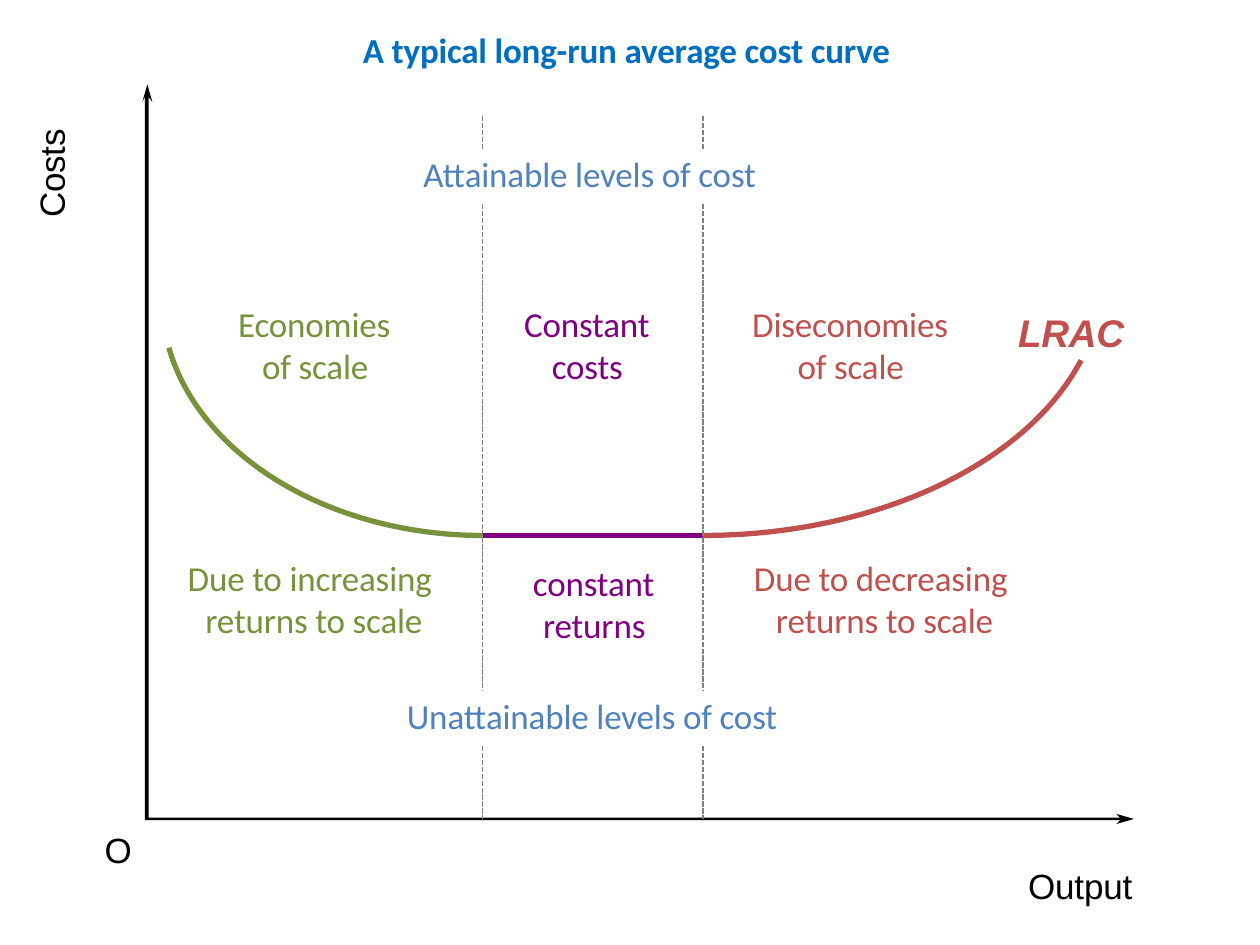
from math import acos, cos, sin

from pptx import Presentation
from pptx.dml.color import RGBColor
from pptx.enum.dml import MSO_LINE_DASH_STYLE as Dash
from pptx.enum.shapes import MSO_CONNECTOR as Connector
from pptx.enum.text import PP_ALIGN as Align
from pptx.oxml.ns import qn
from pptx.util import Inches, Pt
from lxml.etree import SubElement

THEME = {
    "title": "006FC0", "axis": "000000", "economies": "77923B",
    "constant": "800080", "diseconomies": "C0504D", "level": "4F81BC",
    "guide": "808080", "size": 20, "curve_size": 22,
    "curve_width": 3, "guide_width": 1,
}
CAPTION = {"name": "Calibri", "size": Pt(THEME["size"])}
TITLE = {**CAPTION, "bold": True}
AXIS = {**CAPTION, "name": "Arial"}
CURVE = {"name": "Arial", "size": Pt(THEME["curve_size"]), "bold": True, "italic": True}

PLAIN = (0.01, 0)
LABELS = [
    ([("A typical long-run average cost curve", PLAIN)], 2.87, 0.22, 4.26, 0.36, "title", TITLE),
    ([("LRAC", PLAIN)], 8.07, 2.44, 0.88, 0.39, "diseconomies", CURVE),
    ([("Economies of scale", (0.2, -0.19))], 1.88, 2.39, 1.25, 0.7, "economies", CAPTION),
    ([("Constant costs", (0.23, -0.22))], 4.15, 2.39, 1.03, 0.7, "constant", CAPTION),
    ([("Diseconomies of scale", (0.37, -0.36))], 5.96, 2.39, 1.6, 0.7, "diseconomies", CAPTION),
    ([("Attainable levels of cost", PLAIN)], 3.35, 1.2, 2.71, 0.36, "level", CAPTION),
    ([("Unattainable levels of cost", PLAIN)], 3.22, 5.5, 3.01, 0.36, "level", CAPTION),
    ([("Due to increasing", PLAIN), ("returns to scale", (0.15, 0))],
     1.48, 4.41, 1.99, 0.7, "economies", CAPTION),
    ([("Due to decreasing", (0, 0)), ("returns to scale", (0.06, 0))],
     5.96, 4.41, 2.06, 0.7, "diseconomies", CAPTION, Align.CENTER),
    ([("constant returns", (0.09, -0.08))], 4.22, 4.45, 1, 0.7, "constant", CAPTION),
]
AXIS_LABELS = [
    ("Costs", 0.25, 1, 0.34, 0.74),
    ("O", 0.82, 6.59, 0.24, 0.34),
    ("Output", 8.15, 6.87, 0.86, 0.34),
]
AXES_OUTLINE = [
    (9, 6.5), (8.86, 6.46), (8.89, 6.49), (1.18, 6.49), (1.18, 0.77), (1.21, 0.81),
    (1.17, 0.67), (1.13, 0.81), (1.15, 0.77), (1.15, 6.51), (8.89, 6.51), (8.86, 6.54),
]
GUIDES = [3.83, 5.58]
GUIDE_SPANS = [(5.92, 6.5), (1.62, 5.48), (0.92, 1.18)]
MINIMUM_COST = 4.25
CURVES = [
    (GUIDES[0], -2.49, 1.49, 1.88, "economies"),
    (GUIDES[1], 3, 1.39, 2.05, "diseconomies"),
]
STEPS = 60


def paint(format_part, color):
    format_part.rgb = RGBColor.from_string(THEME[color])


def style_line(shape, color, width):
    paint(shape.line.color, color)
    shape.line.width = Pt(THEME[width])


def add_outline(page, contours, close=False):
    scaled = [[(Inches(x), Inches(y)) for x, y in contour] for contour in contours]
    builder = page.shapes.build_freeform(*scaled[0][0], scale=1.0)
    for index, points in enumerate(scaled):
        if index:
            builder.move_to(*points[0])
        builder.add_line_segments(points[1:], close=close)
    outline = builder.convert_to_shape()
    outline.shadow.inherit = False
    outline.fill.background()
    return outline


def add_axes(page):
    axes = add_outline(page, [AXES_OUTLINE], close=True)
    axes.fill.solid()
    paint(axes.fill.fore_color, "axis")
    axes.line.fill.background()


def add_curve(page, left, run, rise, depth, color):
    sweep = acos(1 - rise / depth)
    radius = run / sin(sweep)
    angles = [sweep * step / STEPS for step in range(STEPS + 1)]
    points = [
        (left + radius * sin(angle), MINIMUM_COST - depth * (1 - cos(angle)))
        for angle in angles
    ]
    style_line(add_outline(page, [points]), color, "curve_width")


def add_constant_costs(page):
    start, end = GUIDES
    places = map(Inches, (start, MINIMUM_COST, end, MINIMUM_COST))
    line = page.shapes.add_connector(Connector.STRAIGHT, *places)
    style_line(line, "constant", "curve_width")
    SubElement(line._element.spPr, qn("a:effectLst"))


def add_guides(page):
    contours = [
        [(left, top), (left, bottom)] for left in GUIDES for top, bottom in GUIDE_SPANS
    ]
    guides = add_outline(page, contours)
    style_line(guides, "guide", "guide_width")
    guides.line.dash_style = Dash.SQUARE_DOT


def add_label(page, lines, left, top, width, height, color, font,
              align=Align.LEFT, inset=0.01, spacing=None):
    box = page.shapes.add_textbox(*map(Inches, (left, top, width, height)))
    frame = box.text_frame
    margins = {"margin_left": 0, "margin_right": 0, "margin_bottom": 0,
               "margin_top": Inches(inset), "word_wrap": True}
    for name, value in margins.items():
        setattr(frame, name, value)
    for index, (text, (indent, first)) in enumerate(lines):
        para = frame.add_paragraph() if index else frame.paragraphs[0]
        para.alignment = align
        para.line_spacing = spacing
        layout = para._p.get_or_add_pPr()
        layout.set("marL", str(Inches(indent)))
        layout.set("indent", str(Inches(first)))
        span = para.add_run()
        span.text = text
        for name, value in font.items():
            setattr(span.font, name, value)
        paint(span.font.color, color)
        span._r.get_or_add_rPr().set("spc", "-10")
    return box


def main():
    deck = Presentation()
    deck.slide_width, deck.slide_height = Inches(10), Inches(7.5)
    page = deck.slides.add_slide(deck.slide_layouts[6])

    add_axes(page)
    for curve in CURVES:
        add_curve(page, *curve)
    add_constant_costs(page)
    add_guides(page)

    for label in LABELS:
        add_label(page, *label)
    for text, *place in AXIS_LABELS:
        box = add_label(page, [(text, PLAIN)], *place, "axis", AXIS, inset=0, spacing=Pt(23.1))
        if text == "Costs":
            box.text_frame._txBody.bodyPr.set("vert", "vert270")

    deck.save("out.pptx")


if __name__ == "__main__":
    main()
